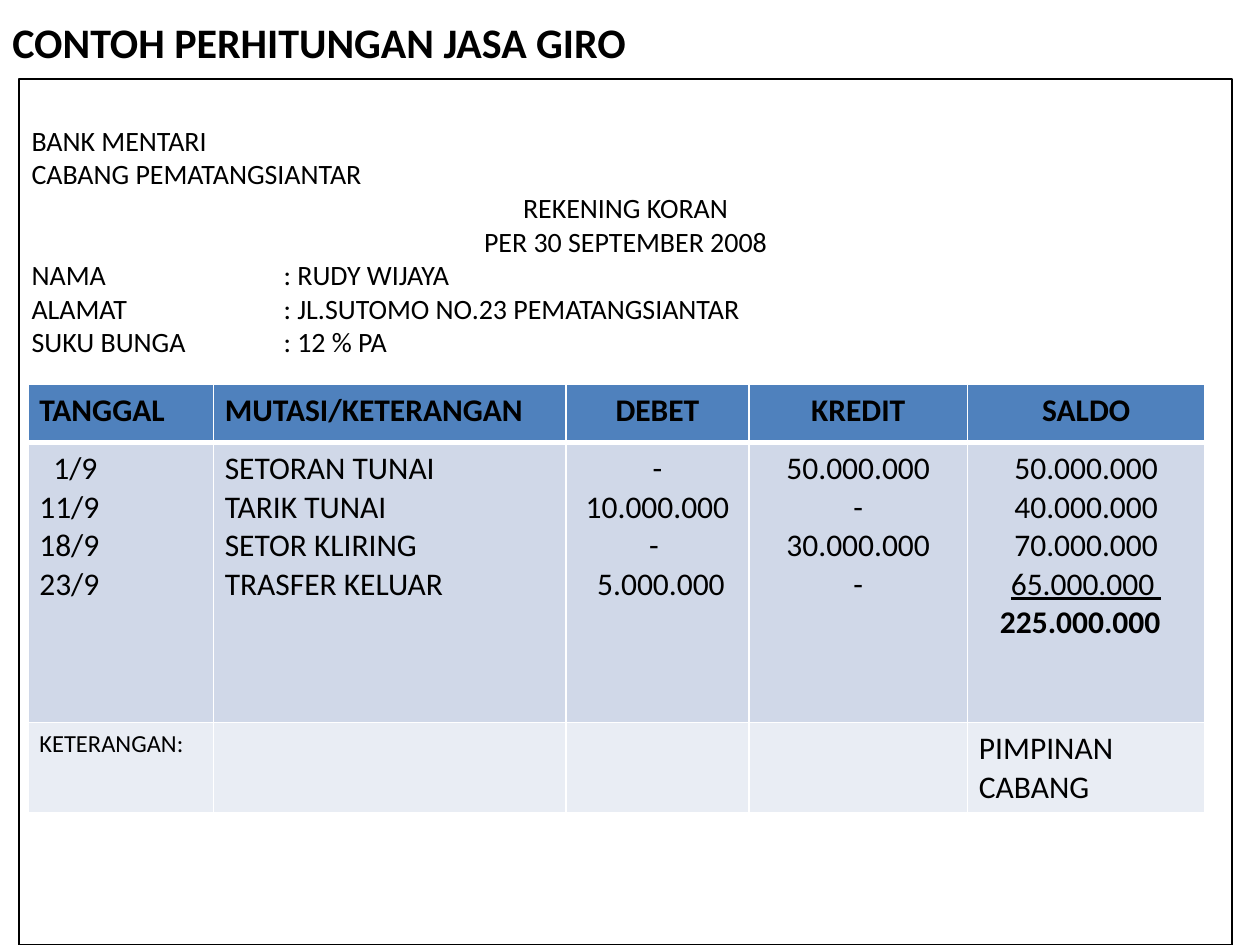
import pptx
import pptx.dml.color
import pptx.enum.shapes
import pptx.enum.text
import pptx.oxml.ns
import pptx.util
from dataclasses import dataclass
from lxml import etree

Pt = pptx.util.Pt
qn = pptx.oxml.ns.qn
ALIGN = pptx.enum.text.PP_ALIGN
ANCHOR = pptx.enum.text.MSO_ANCHOR


@dataclass(frozen=True)
class Theme:
    font: str = "Calibri"
    ink: str = "000000"
    paper: str = "FFFFFF"
    header: str = "4F81BD"
    body: str = "D0D8E8"
    footer: str = "E9EDF4"
    title_size: int = 24
    letter_size: int = 16
    table_size: int = 18
    note_size: int = 14


THEME = Theme()


@dataclass(frozen=True)
class Line:
    text: str
    center: bool = False
    left: float = 0
    right: float = 0
    tab: float = 0
    size: int = THEME.table_size
    bold: bool = False
    underline: bool = False


LETTER = [
    Line("BANK MENTARI"),
    Line("CABANG PEMATANGSIANTAR"),
    Line("REKENING KORAN", center=True),
    Line("PER 30 SEPTEMBER 2008", center=True),
    Line("NAMA\t: RUDY WIJAYA", tab=144),
    Line("ALAMAT\t: JL.SUTOMO NO.23 PEMATANGSIANTAR", tab=144),
    Line("SUKU BUNGA\t: 12 % PA", tab=144),
]

COLUMNS = [106, 201.5, 104.5, 125, 135.5]
ROWS = [33.5, 160, 48]
HEADINGS = ["TANGGAL", "MUTASI/KETERANGAN", "DEBET", "KREDIT", "SALDO"]
ENTRIES = [
    [Line("1/9", left=8), "11/9", "18/9", "23/9"],
    ["SETORAN TUNAI", "TARIK TUNAI", "SETOR KLIRING", "TRASFER KELUAR"],
    ["-", "10.000.000", Line("-", center=True, right=4),
     Line("5.000.000", center=True, left=8)],
    ["50.000.000", "-", "30.000.000", "-"],
    ["50.000.000", "40.000.000", "70.000.000",
     Line("65.000.000 ", center=True, underline=True),
     Line("225.000.000", left=12, bold=True)],
]
FOOTERS = [[Line("KETERANGAN:", size=THEME.note_size)], [], [], [],
           [Line("PIMPINAN CABANG")]]


def rgb(value):
    return pptx.dml.color.RGBColor.from_string(value)


def write(tf, lines, size=None):
    """Put each line in its own paragraph."""
    for i, line in enumerate(lines):
        p = tf.paragraphs[0] if i == 0 else tf.add_paragraph()
        p.alignment = ALIGN.CENTER if line.center else ALIGN.LEFT
        pPr = p._p.get_or_add_pPr()
        if line.left:
            pPr.set("marL", str(Pt(line.left)))
        if line.right:
            pPr.set("marR", str(Pt(line.right)))
        if line.tab:
            tabs = etree.SubElement(pPr, qn("a:tabLst"))
            etree.SubElement(tabs, qn("a:tab"), pos=str(Pt(line.tab)), algn="l")
        r = p.add_run()
        r.text = line.text
        r.font.name = THEME.font
        r.font.size = Pt(size or line.size)
        r.font.bold = line.bold
        r.font.underline = line.underline
        r.font.color.rgb = rgb(THEME.ink)


def add_title(s, text):
    sp = s.shapes.add_textbox(0, 0, Pt(684), Pt(48))
    tf = sp.text_frame
    tf.word_wrap = True
    tf.vertical_anchor = ANCHOR.MIDDLE
    write(tf, [Line(text, bold=True)], THEME.title_size)


def add_letter(s, lines):
    sp = s.shapes.add_shape(pptx.enum.shapes.MSO_SHAPE.RECTANGLE,
                            Pt(11), Pt(45), Pt(693), Pt(495))
    sp.shadow.inherit = False
    sp.fill.solid()
    sp.fill.fore_color.rgb = rgb(THEME.paper)
    sp.line.color.rgb = rgb(THEME.ink)
    sp.line.width = Pt(1)
    tf = sp.text_frame
    tf.word_wrap = True
    tf.vertical_anchor = ANCHOR.TOP
    tf.margin_top = Pt(25.5)
    write(tf, lines, THEME.letter_size)


def set_borders(cell, top, bottom):
    tcPr = cell._tc.get_or_add_tcPr()
    widths = {"a:lnL": 1, "a:lnR": 1, "a:lnT": top, "a:lnB": bottom}
    for i, (tag, width) in enumerate(widths.items()):
        ln = etree.Element(qn(tag), w=str(Pt(width)))
        fill = etree.SubElement(ln, qn("a:solidFill"))
        etree.SubElement(fill, qn("a:srgbClr"), val=THEME.paper)
        tcPr.insert(i, ln)


def fill_cell(cell, lines, color, top=1, bottom=1):
    cell.margin_left = cell.margin_right = Pt(6.5)
    cell.margin_top = cell.margin_bottom = Pt(4)
    cell.fill.solid()
    cell.fill.fore_color.rgb = rgb(color)
    set_borders(cell, top, bottom)
    write(cell.text_frame, lines)


def add_ledger(s):
    table = s.shapes.add_table(len(ROWS), len(COLUMNS), Pt(16), Pt(219.5),
                               Pt(sum(COLUMNS)), Pt(sum(ROWS))).table
    table.horz_banding = False
    for row, height in zip(table.rows, ROWS):
        row.height = Pt(height)
    for c, width in enumerate(COLUMNS):
        table.columns[c].width = Pt(width)
        center = c >= 2  # amounts are centred
        heading = Line(HEADINGS[c], center=center, bold=True)
        entries = [e if isinstance(e, Line) else Line(e, center=center)
                   for e in ENTRIES[c]]
        fill_cell(table.cell(0, c), [heading], THEME.header, bottom=3)
        fill_cell(table.cell(1, c), entries, THEME.body, top=3)
        fill_cell(table.cell(2, c), FOOTERS[c], THEME.footer)


def main():
    prs = pptx.Presentation()
    prs.slide_width, prs.slide_height = Pt(720), Pt(540)
    s = prs.slides.add_slide(prs.slide_layouts[6])

    # Heading, account statement and its ledger
    add_title(s, "CONTOH PERHITUNGAN JASA GIRO")
    add_letter(s, LETTER)
    add_ledger(s)
    prs.save("out.pptx")


if __name__ == "__main__":
    main()
